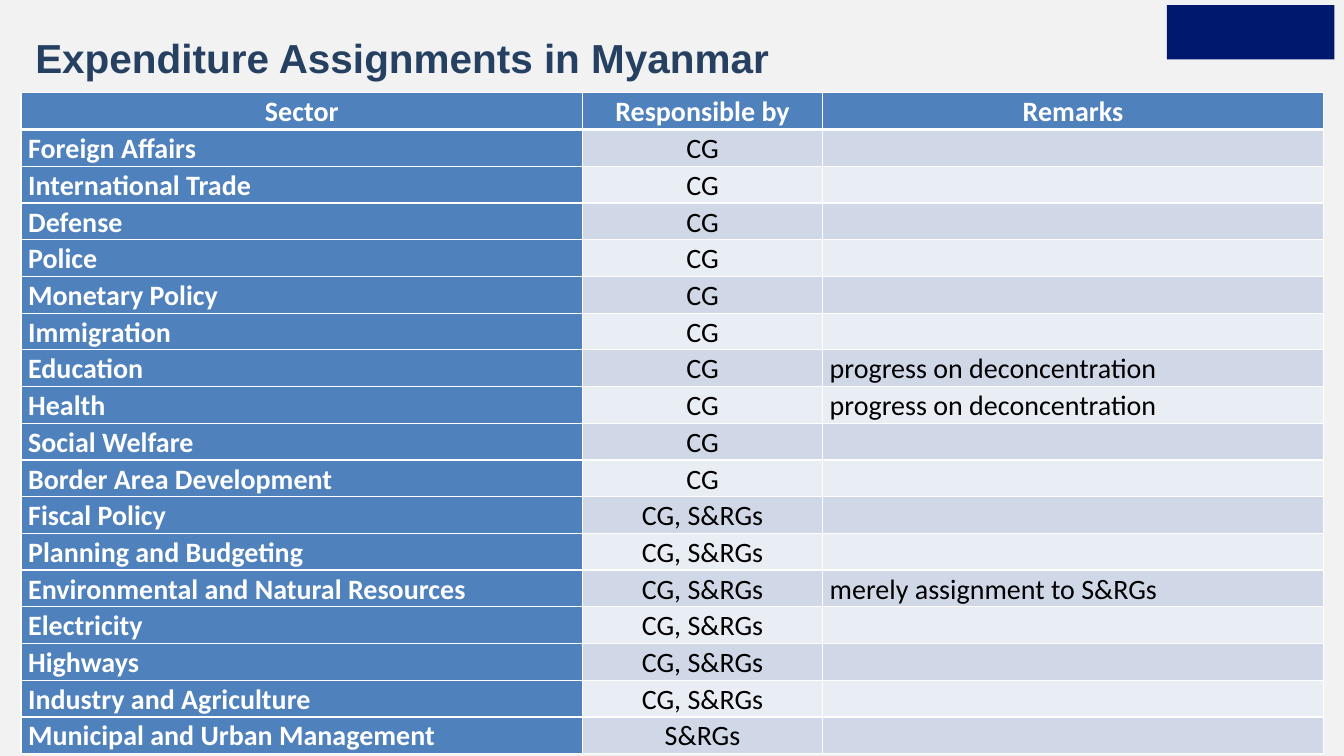
from lxml import etree
from pptx import Presentation
from pptx.dml.color import RGBColor
from pptx.enum.shapes import MSO_SHAPE
from pptx.enum.text import PP_ALIGN
from pptx.oxml.ns import qn
from pptx.util import Cm, Pt

RECTANGLE = MSO_SHAPE.RECTANGLE
CENTER, JUSTIFY = PP_ALIGN.CENTER, PP_ALIGN.JUSTIFY
COLORS = {
    "background": "F2F2F2", "title": "254061", "emblem": "00196E",
    "header": "4F81BD", "odd": "D0D8E8", "even": "E9EDF4",
    "white": "FFFFFF", "black": "000000",
}
CENTRAL, SHARED, REGIONAL = "CG", "CG, S&RGs", "S&RGs"
ASSIGNMENTS = [
    ("Sector", "Responsible by", "Remarks"),
    ("Foreign Affairs", CENTRAL, ""),
    ("International Trade", CENTRAL, ""),
    ("Defense", CENTRAL, ""),
    ("Police", CENTRAL, ""),
    ("Monetary Policy", CENTRAL, ""),
    ("Immigration", CENTRAL, ""),
    ("Education", CENTRAL, "progress on deconcentration"),
    ("Health", CENTRAL, "progress on deconcentration"),
    ("Social Welfare", CENTRAL, ""),
    ("Border Area Development", CENTRAL, ""),
    ("Fiscal Policy", SHARED, ""),
    ("Planning and Budgeting", SHARED, ""),
    ("Environmental and Natural Resources", SHARED, "merely assignment to S&RGs"),
    ("Electricity", SHARED, ""),
    ("Highways", SHARED, ""),
    ("Industry and Agriculture", SHARED, ""),
    ("Municipal and Urban Management", REGIONAL, ""),
]
COLUMN_WIDTHS = [14.15, 6.05, 12.62]
ROW_HEIGHT = 0.92


def color(name):
    return RGBColor.from_string(COLORS[name])


def add_border(cell, side, points):
    line = etree.SubElement(cell._tc.get_or_add_tcPr(), qn(f"a:ln{side}"), w=str(Pt(points)))
    fill = etree.SubElement(line, qn("a:solidFill"))
    etree.SubElement(fill, qn("a:srgbClr"), val=COLORS["white"])


prs = Presentation()
prs.slide_width, prs.slide_height = Cm(33.87), Cm(19.05)
slide = prs.slides.add_slide(prs.slide_layouts[6])
slide.background.fill.solid()
slide.background.fill.fore_color.rgb = color("background")

emblem = slide.shapes.add_shape(RECTANGLE, Cm(29.41), Cm(0.13), Cm(4.22), Cm(1.37))
emblem.shadow.inherit = False
emblem.fill.solid()
emblem.fill.fore_color.rgb = color("emblem")
emblem.line.fill.background()

assignments = slide.shapes.add_table(
    len(ASSIGNMENTS), len(COLUMN_WIDTHS), Cm(0.53), Cm(2.34),
    Cm(sum(COLUMN_WIDTHS)), Cm(ROW_HEIGHT * len(ASSIGNMENTS))).table
for column, width in zip(assignments.columns, COLUMN_WIDTHS):
    column.width = Cm(width)

for row, entries in enumerate(ASSIGNMENTS):
    assignments.rows[row].height = Cm(ROW_HEIGHT)
    for col, entry in enumerate(entries):
        cell = assignments.cell(row, col)
        heading = row == 0 or col == 0
        cell.margin_left = cell.margin_right = Cm(0.18)
        cell.margin_top = cell.margin_bottom = 0
        for side in "LRTB":
            header_rule = (row, side) in ((0, "B"), (1, "T"))
            add_border(cell, side, 3 if header_rule else 1)
        cell.fill.solid()
        cell.fill.fore_color.rgb = color("header" if heading else "odd" if row % 2 else "even")
        cell.text = entry
        paragraph = cell.text_frame.paragraphs[0]
        paragraph.alignment = CENTER if row == 0 or col == 1 else JUSTIFY
        paragraph.line_spacing = 1.07
        paragraph.font.name = "Calibri"
        paragraph.font.size = Pt(20)
        paragraph.font.bold = heading
        paragraph.font.color.rgb = color("white" if heading else "black")

title = slide.shapes.add_textbox(Cm(0.64), Cm(0.72), Cm(30.48), Cm(1.35)).text_frame
title.word_wrap = True
title.text = "Expenditure Assignments in Myanmar"
heading_line = title.paragraphs[0]
heading_line.font.name = "Arial"
heading_line.font.size = Pt(28.9)
heading_line.font.bold = True
heading_line.font.color.rgb = color("title")

prs.save("out.pptx")
